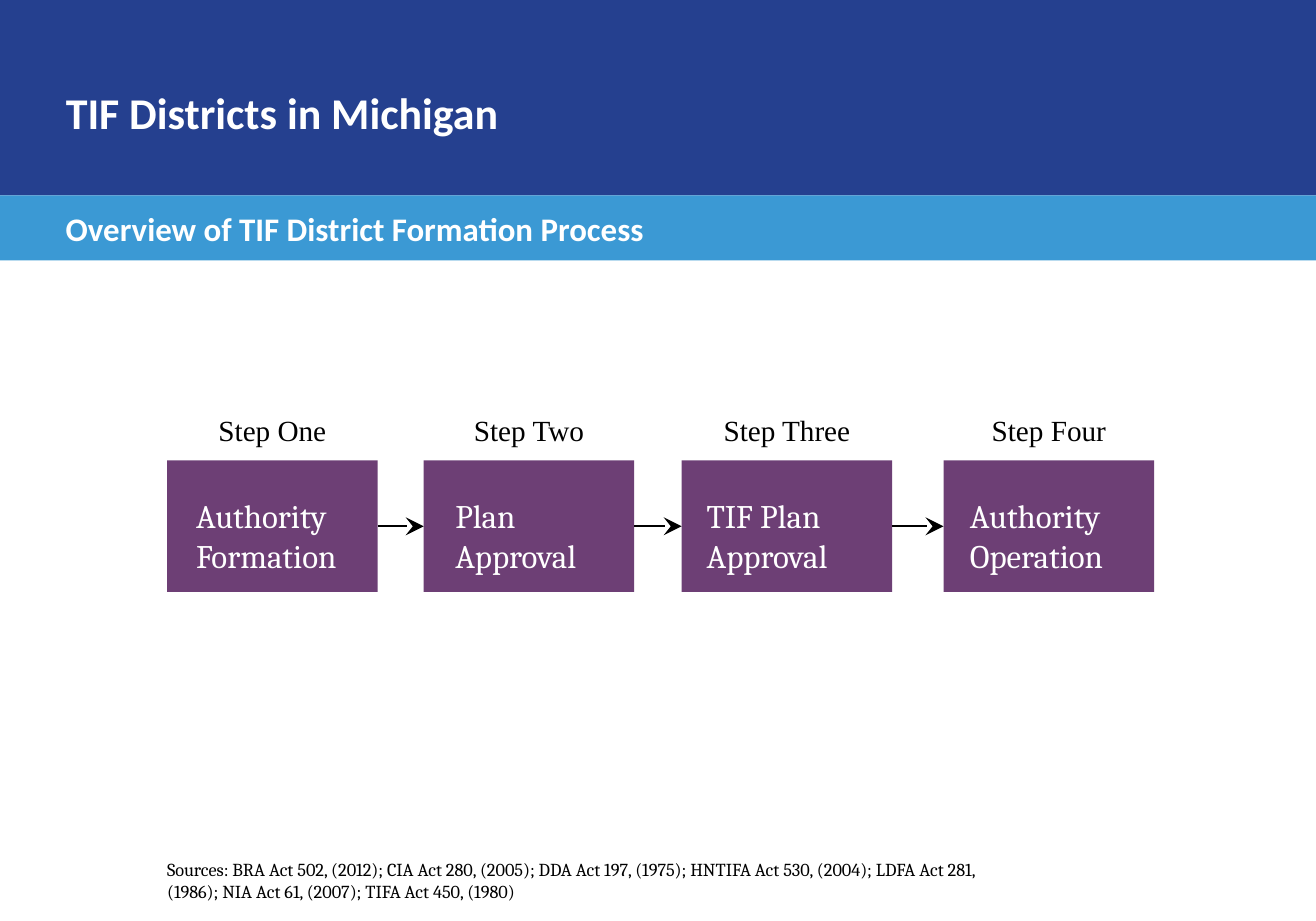
import dataclasses

import pptx
import pptx.chart.data
import pptx.dml.color
import pptx.enum.shapes
import pptx.enum.text
import pptx.oxml
import pptx.oxml.ns
import pptx.util

ANCHOR = pptx.enum.text.MSO_ANCHOR
ALIGN = pptx.enum.text.PP_ALIGN
RECTANGLE = pptx.enum.shapes.MSO_SHAPE.RECTANGLE
STRAIGHT = pptx.enum.shapes.MSO_CONNECTOR.STRAIGHT


@dataclasses.dataclass(frozen=True)
class Theme:
    """Colours, fonts and type sizes of the deck."""
    navy: str = "25408F"
    sky: str = "3B99D4"
    plum: str = "6D3F75"
    white: str = "FFFFFF"
    black: str = "000000"
    heading: str = "Calibri"
    body: str = "Cambria"
    label: str = "Times New Roman"
    title_size: int = 24
    body_size: int = 18
    label_size: int = 16
    source_size: int = 10


@dataclasses.dataclass(frozen=True)
class Box:
    """A region of the page, in inches."""
    left: float
    top: float
    width: float
    height: float

    def lengths(self):
        """Return the region as python-pptx lengths."""
        return [pptx.util.Inches(side) for side in dataclasses.astuple(self)]


THEME = Theme()
PAGE = Box(0, 0, 10, 7)
MARGIN = 0.5
STEP_WIDTH = 1.6
LABEL_HEIGHT = 0.37
STEPS = [
    ("Step One", "Authority Formation", 0, 0.22),
    ("Step Two", "Plan Approval", 1.95, 0.24),
    ("Step Three", "TIF Plan Approval", 3.91, 0.19),
    ("Step Four", "Authority Operation", 5.9, 0.2),
]
SOURCES = [
    "Sources: BRA Act 502, (2012); CIA Act 280, (2005); DDA Act 197, (1975); "
    "HNTIFA Act 530, (2004); LDFA Act 281,",
    "(1986); NIA Act 61, (2007); TIFA Act 450, (1980)",
]


def rgb(colour):
    """Turn a hex string into a colour."""
    return pptx.dml.color.RGBColor.from_string(colour)


def write(shape, lines, font, size, colour, bold=False, align=ALIGN.LEFT,
          anchor=ANCHOR.TOP, insets=(0, 0, 0)):
    """Fill a shape with paragraphs; insets are left, top and right."""
    frame = shape.text_frame
    frame.text = "\n".join(lines)
    frame.word_wrap = True
    frame.auto_size = pptx.enum.text.MSO_AUTO_SIZE.NONE
    frame.vertical_anchor = anchor
    frame.margin_left, frame.margin_top, frame.margin_right = map(pptx.util.Inches, insets)
    frame.margin_bottom = 0
    for para in frame.paragraphs:
        para.alignment = align
        para.font.name = font
        para.font.size = pptx.util.Pt(size)
        para.font.bold = bold
        para.font.color.rgb = rgb(colour)


def add_panel(page, box, colour):
    """Add a plain filled rectangle."""
    panel = page.shapes.add_shape(RECTANGLE, *box.lengths())
    panel.shadow.inherit = False
    panel.fill.solid()
    panel.fill.fore_color.rgb = rgb(colour)
    panel.line.fill.background()
    return panel


def add_header(page, box):
    """Add the title band with the subtitle band under it."""
    split = box.height * 0.75
    add_panel(page, Box(box.left, box.top, box.width, split), THEME.navy)
    subtitle = add_panel(
        page, Box(box.left, box.top + split, box.width, box.height - split), THEME.sky)
    write(subtitle, ["Overview of TIF District Formation Process"], THEME.heading,
          THEME.body_size, THEME.white, bold=True, anchor=ANCHOR.MIDDLE,
          insets=(MARGIN, 0, 0))
    title = page.shapes.title
    place = Box(box.left + MARGIN, box.top + 0.65, box.width - 2 * MARGIN, 0.4)
    title.left, title.top, title.width, title.height = place.lengths()
    write(title, ["TIF Districts in Michigan"], THEME.heading, THEME.title_size,
          THEME.white, bold=True)
    title.element.getparent().append(title.element)


def add_step(page, box, label, action, indent):
    """Add one step: its label above a filled box."""
    gap = 0.05
    caption = page.shapes.add_textbox(
        *Box(box.left, box.top, box.width, LABEL_HEIGHT).lengths())
    write(caption, [label], THEME.label, THEME.label_size, THEME.black,
          align=ALIGN.CENTER, anchor=ANCHOR.MIDDLE)
    top = LABEL_HEIGHT + gap
    panel = add_panel(
        page, Box(box.left, box.top + top, box.width, box.height - top), THEME.plum)
    write(panel, [action], THEME.body, THEME.body_size, THEME.white,
          insets=(indent, 0.27, 0.2))
    return panel


def add_arrow(page, start, end):
    """Join two step boxes with an arrow."""
    arrow = page.shapes.add_connector(STRAIGHT, 0, 0, 0, 0)
    arrow.begin_connect(start, 3)
    arrow.end_connect(end, 1)
    arrow.line.color.rgb = rgb(THEME.black)
    arrow.line.width = pptx.util.Pt(1)
    namespace = pptx.oxml.ns.nsdecls("a")
    arrow.line._get_or_add_ln().append(pptx.oxml.parse_xml(
        f'<a:tailEnd {namespace} type="stealth" w="lg" len="lg"/>'))
    arrow.element.spPr.append(pptx.oxml.parse_xml(f"<a:effectLst {namespace}/>"))


def add_process(page, box):
    """Add the row of steps and the arrows between them."""
    panels = [
        add_step(page, Box(box.left + offset, box.top, STEP_WIDTH, box.height),
                 label, action, indent)
        for label, action, offset, indent in STEPS
    ]
    for start, end in zip(panels, panels[1:]):
        add_arrow(page, start, end)


def add_sources(page, box):
    """Add the source note."""
    note = page.shapes.add_textbox(*box.lengths())
    write(note, SOURCES, THEME.body, THEME.source_size, THEME.black)


def main():
    """Build the deck and save it."""
    deck = pptx.Presentation()
    deck.slide_width = pptx.util.Inches(PAGE.width)
    deck.slide_height = pptx.util.Inches(PAGE.height)
    page = deck.slides.add_slide(deck.slide_layouts[5])
    add_header(page, Box(0, 0, PAGE.width, 1.98))
    add_process(page, Box(1.27, 3.08, 7.5, 1.42))
    add_sources(page, Box(1.27, 6.52, 7.04, 0.33))
    deck.save("out.pptx")


if __name__ == "__main__":
    main()
